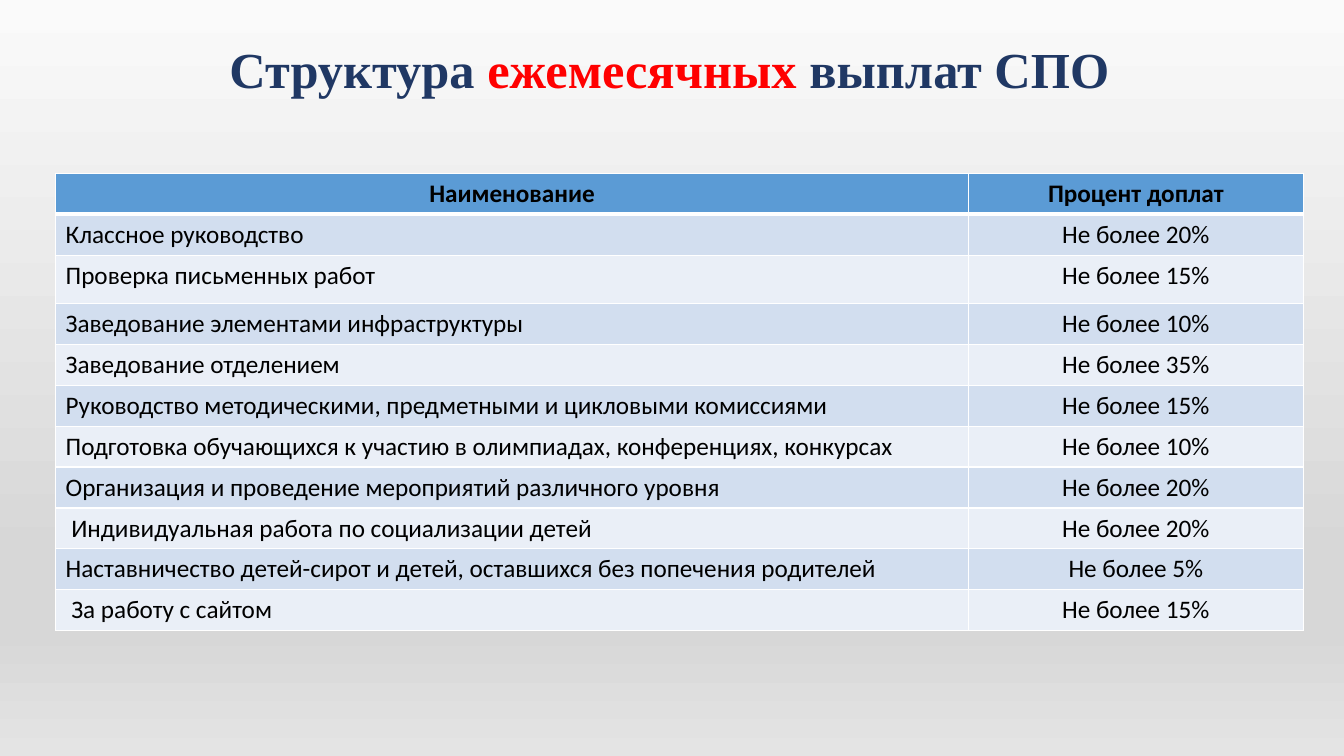
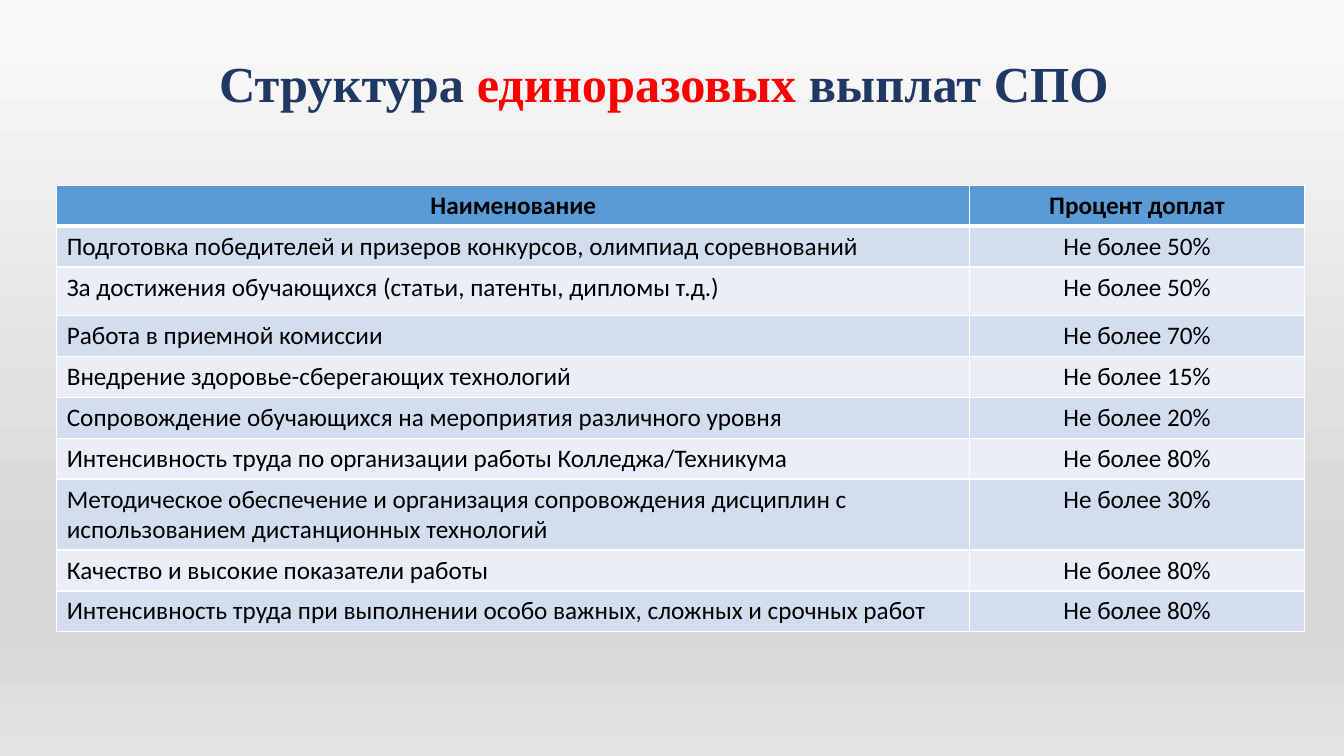
import pptx
import pptx.util
import pptx.dml.color
import pptx.enum.text
import pptx.oxml.ns
import lxml.etree

Cm, Pt = pptx.util.Cm, pptx.util.Pt
qn = pptx.oxml.ns.qn
ALIGN = pptx.enum.text.PP_ALIGN
MIDDLE = pptx.enum.text.MSO_ANCHOR.MIDDLE

# Content: tall holds the heights of rows that differ from ROW
HEAD = ("Наименование", "Процент доплат")
SLIDES = [
    {
        "word": "ежемесячных",
        "title": (5.44, 0.51, 22.86, 2.64),
        "table": (1.4, 4.37),
        "tall": {2: 1.22},
        "rows": [
            ("Классное руководство", 20),
            ("Проверка письменных работ", 15),
            ("Заведование элементами инфраструктуры", 10),
            ("Заведование отделением", 35),
            ("Руководство методическими, предметными и цикловыми комиссиями", 15),
            ("Подготовка обучающихся к участию в олимпиадах, конференциях, конкурсах", 10),
            ("Организация и проведение мероприятий различного уровня", 20),
            (" Индивидуальная работа по социализации детей", 20),
            ("Наставничество детей-сирот и детей, оставшихся без попечения родителей", 5),
            (" За работу с сайтом", 15),
        ],
    },
    {
        "word": "единоразовых",
        "title": (4.27, 0.86, 24.92, 2.64),
        "table": (1.43, 4.67),
        "tall": {2: 1.22, 7: 1.79},
        "rows": [
            ("Подготовка победителей и призеров конкурсов, олимпиад соревнований", 50),
            ("За достижения обучающихся (статьи, патенты, дипломы т.д.)", 50),
            ("Работа в приемной комиссии", 70),
            ("Внедрение здоровье-сберегающих технологий", 15),
            ("Сопровождение обучающихся на мероприятия различного уровня", 20),
            ("Интенсивность труда по организации работы Колледжа/Техникума", 80),
            ("Методическое обеспечение и организация сопровождения дисциплин "
             "с использованием дистанционных технологий", 30),
            ("Качество и высокие показатели работы", 80),
            ("Интенсивность труда при выполнении особо важных, сложных и срочных работ", 80),
        ],
    },
]

# Shared look
COLS = (23.01, 8.43)
ROW = 1.03
NAVY, RED, BLACK, WHITE = "203864", "FF0000", "000000", "FFFFFF"
BLUE, BANDS = "5B9BD5", ("EAEFF7", "D2DEEF")
STOPS = ((0, "FAFAFA"), (74, "D7D7D7"), (83, "D7D7D7"), (100, "E4E4E4"))
TITLE = {"name": "Times New Roman", "size": Pt(36), "bold": True}
BODY = {"name": "Calibri", "size": Pt(18)}


def rgb(code):
    return pptx.dml.color.RGBColor.from_string(code)


def add_run(para, text, form, color):
    run = para.add_run()
    run.text = text
    for key, value in form.items():
        setattr(run.font, key, value)
    run.font.color.rgb = rgb(color)


def add_node(root, tag, **attrs):
    return lxml.etree.SubElement(root, qn(tag), attrs)


def set_back(master):
    fill = master.background.fill
    fill.gradient()
    fill.gradient_angle = 270  # counted counter-clockwise: top to bottom
    stops = next(master.element.iter(qn("a:gsLst")))
    for old in list(stops):
        stops.remove(old)
    for pos, code in STOPS:
        stop = add_node(stops, "a:gs", pos=str(pos * 1000))
        add_node(stop, "a:srgbClr", val=code)


def add_title(slide, word, place):
    box = slide.shapes.add_textbox(*map(Cm, place))
    frame = box.text_frame
    frame.word_wrap = True
    frame.vertical_anchor = MIDDLE
    para = frame.paragraphs[0]
    para.alignment = ALIGN.CENTER
    para.line_spacing = 0.9
    for text, color in (("Структура ", NAVY), (word, RED), (" выплат СПО", NAVY)):
        add_run(para, text, TITLE, color)


def set_lines(props, row):
    thick = {"L": 1, "R": 1, "T": 3 if row == 1 else 1, "B": 3 if row == 0 else 1}
    for at, (side, width) in enumerate(thick.items()):
        line = add_node(props, "a:ln" + side, w=str(Pt(width)))
        add_node(add_node(line, "a:solidFill"), "a:srgbClr", val=WHITE)
        props.insert(at, line)  # borders come before the fill


def add_table(slide, rows, place, tall):
    cells = [HEAD] + [(name, f"Не более {rate}%") for name, rate in rows]
    highs = [tall.get(i, ROW) for i in range(len(cells))]
    sizes = (*place, sum(COLS), sum(highs))
    frame = slide.shapes.add_table(len(cells), len(COLS), *map(Cm, sizes))
    table = frame.table
    table.horz_banding = False
    for col, width in zip(table.columns, COLS):
        col.width = Cm(width)
    for i, texts in enumerate(cells):
        table.rows[i].height = Cm(highs[i])
        for j, text in enumerate(texts):
            cell = table.cell(i, j)
            cell.fill.solid()
            cell.fill.fore_color.rgb = rgb(BANDS[i % 2] if i else BLUE)
            para = cell.text_frame.paragraphs[0]
            para.alignment = ALIGN.LEFT if i and j == 0 else ALIGN.CENTER
            add_run(para, text, {**BODY, "bold": i == 0}, BLACK)
    for n, props in enumerate(list(frame.element.iter(qn("a:tcPr")))):
        set_lines(props, n // len(COLS))


def main():
    deck = pptx.Presentation()
    deck.slide_width, deck.slide_height = Cm(33.87), Cm(19.05)
    set_back(deck.slide_master)
    for page in SLIDES:
        slide = deck.slides.add_slide(deck.slide_layouts[6])
        add_title(slide, page["word"], page["title"])
        add_table(slide, page["rows"], page["table"], page["tall"])
    deck.save("out.pptx")


if __name__ == "__main__":
    main()
